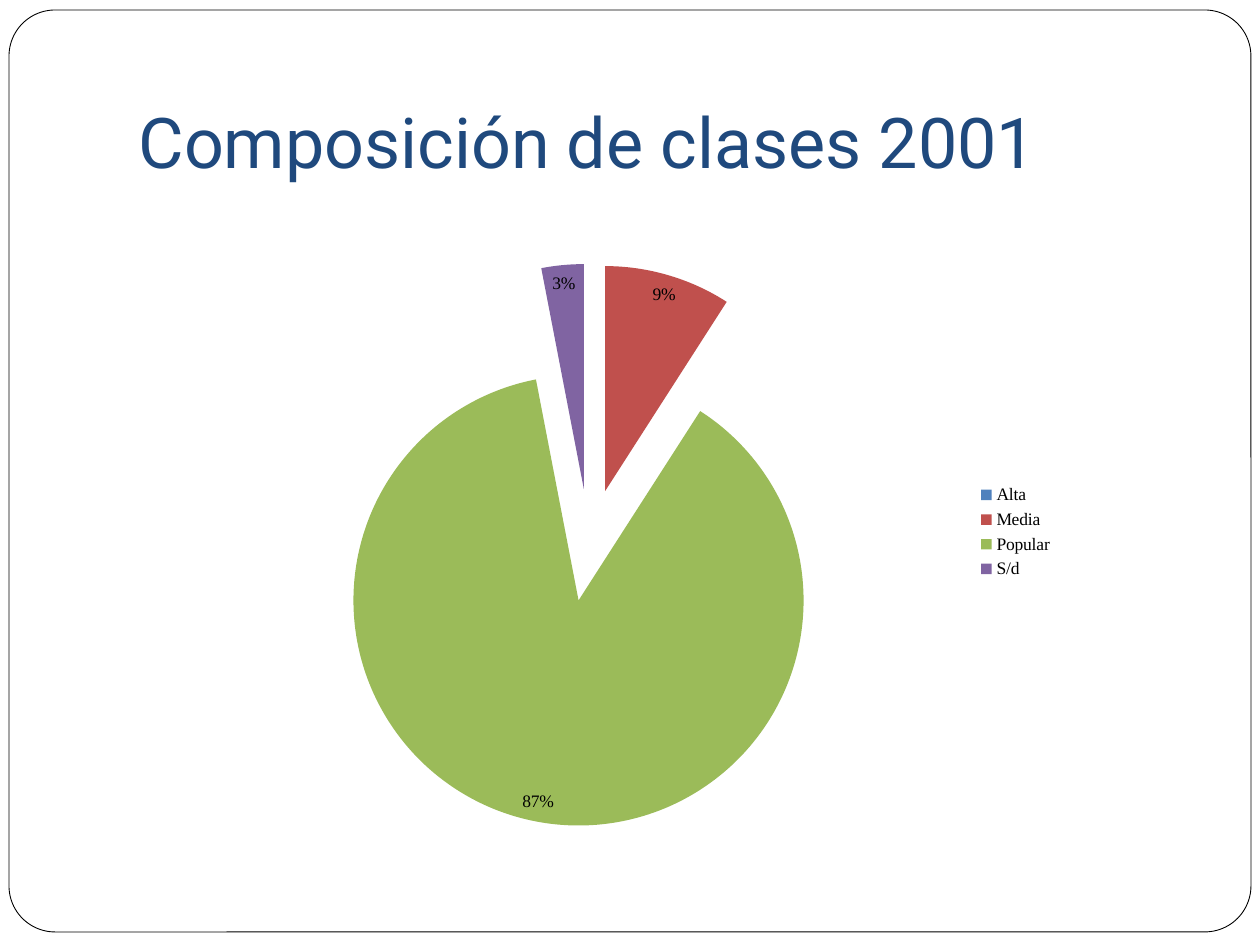
from dataclasses import dataclass

from lxml import etree
from pptx import Presentation
from pptx import util as u
from pptx.chart.data import CategoryChartData
from pptx.dml.color import RGBColor
from pptx.enum import chart as charts, shapes, text
from pptx.oxml.ns import qn

EMU_PER_PX = u.Inches(1) / 126


@dataclass(frozen=True)
class Theme:
    ink: str = "000000"
    paper: str = "FFFFFF"
    heading: str = "1F497D"
    slices: tuple = ("4F81BD", "C0504D", "9BBB59", "8064A2")
    heading_font: str = "Roboto"
    chart_font: str = "Times New Roman"
    heading_size: int = 40
    chart_size: int = 10


def px(length):
    return u.Emu(round(length * EMU_PER_PX))


def paint(fill, color):
    fill.solid()
    fill.fore_color.rgb = RGBColor.from_string(color)


def style_font(font, name, size, color):
    font.name = name
    font.size = u.Pt(size)
    font.color.rgb = RGBColor.from_string(color)


class SlideBuilder:
    def __init__(self, deck, theme):
        self.theme = theme
        self.page = deck.slides.add_slide(deck.slide_layouts[5])
        paint(self.page.background.fill, theme.paper)

    def title(self, words, left, top, width, height):
        box = self.page.shapes.title
        box.left, box.top, box.width, box.height = map(px, (left, top, width, height))
        frame = box.text_frame
        frame.word_wrap = True
        frame.auto_size = text.MSO_AUTO_SIZE.NONE
        frame.vertical_anchor = text.MSO_ANCHOR.BOTTOM
        frame.margin_left = frame.margin_right = frame.margin_bottom = u.Inches(0.1)
        frame.margin_top = u.Inches(0.05)
        para = frame.paragraphs[0]
        para.alignment = text.PP_ALIGN.LEFT
        span = para.add_run()
        span.text = words
        style_font(span.font, self.theme.heading_font, self.theme.heading_size,
                   self.theme.heading)

    def border(self, left, top, width, height):
        """Draw the rounded page border behind the title."""
        box = self.page.shapes.add_shape(shapes.MSO_SHAPE.ROUNDED_RECTANGLE,
                                         *map(px, (left, top, width, height)))
        box.adjustments[0] = 0.05
        box.shadow.inherit = False
        paint(box.fill, self.theme.paper)
        paint(box.line.fill, self.theme.ink)
        box.line.width = u.Pt(0.5)
        self.page.shapes.title.element.addprevious(box.element)

    def pie(self, shares, explosion, left, top, width, height):
        data = CategoryChartData()
        data.categories = list(shares)
        data.add_series("Series 1", list(shares.values()))
        chart = self.page.shapes.add_chart(
            charts.XL_CHART_TYPE.PIE, *map(px, (left, top, width, height)), data).chart
        style_font(chart.font, self.theme.chart_font, self.theme.chart_size,
                   self.theme.ink)
        chart.has_title = False
        chart.has_legend = True
        chart.legend.position = charts.XL_LEGEND_POSITION.RIGHT
        chart.legend.include_in_layout = False

        plot = chart.plots[0]
        plot.vary_by_categories = True
        series = plot.series[0]
        for index, color in enumerate(self.theme.slices):
            paint(series.points[index].format.fill, color)
        offset = etree.Element(qn("c:explosion"), val=str(explosion))
        series._element.find(qn("c:dPt")).addprevious(offset)

        labels = series.data_labels
        labels.show_value = True
        labels.number_format = '0"%"'
        labels.number_format_is_linked = False
        labels.position = charts.XL_LABEL_POSITION.BEST_FIT
        style_font(labels.font, self.theme.chart_font, self.theme.chart_size,
                   self.theme.ink)


def main():
    deck = Presentation()
    deck.slide_width, deck.slide_height = px(1260), px(945)
    slide = SlideBuilder(deck, Theme())
    slide.border(9, 10, 1242, 922)
    slide.title("Composición de clases 2001", 126, 38, 1071, 157)
    slide.pie({"Alta": 0, "Media": 9, "Popular": 87, "S/d": 3}, 25, 203, 220, 863, 624)
    deck.save("out.pptx")


if __name__ == "__main__":
    main()
